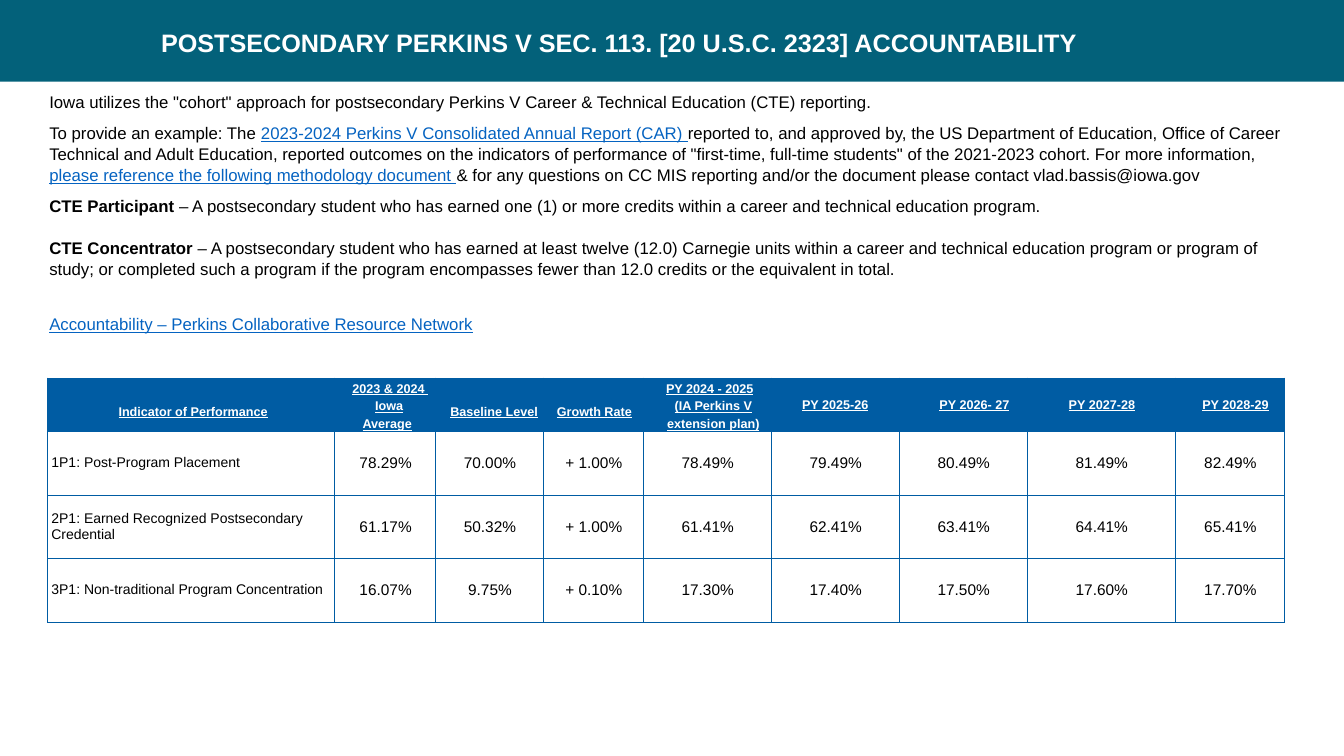
from lxml import etree
from pptx import Presentation
from pptx.dml.color import RGBColor
from pptx.enum.shapes import MSO_SHAPE
from pptx.enum.text import MSO_ANCHOR, PP_ALIGN
from pptx.oxml.ns import qn
from pptx.util import Inches, Pt

RECTANGLE = MSO_SHAPE.RECTANGLE
MIDDLE = MSO_ANCHOR.MIDDLE
LEFT, CENTER = PP_ALIGN.LEFT, PP_ALIGN.CENTER
TEAL = RGBColor(0x03, 0x61, 0x7A)
BLUE = RGBColor(0x00, 0x5C, 0xA3)
LINK_BLUE = RGBColor(0x05, 0x63, 0xC1)
BLACK = RGBColor(0x00, 0x00, 0x00)
WHITE = RGBColor(0xFF, 0xFF, 0xFF)
FONT = "Arial"
PLAIN, BOLD, LINK = "plain", "bold", "link"


def style_font(font, size, color, bold=False, underline=False):
    font.name = FONT
    font.size = Pt(size)
    font.color.rgb = color
    font.bold = bold
    font.underline = underline


def fill_cell(cell, lines, size, color, align, header=False):
    """Write (text, left indent) lines into a cell and draw its borders."""
    cell.margin_left = cell.margin_right = cell.margin_top = cell.margin_bottom = 0
    cell.vertical_anchor = MIDDLE
    frame = cell.text_frame
    frame.text = "\n".join(text for text, _ in lines)
    for paragraph, (_, indent) in zip(frame.paragraphs, lines):
        paragraph.alignment = align
        paragraph._p.get_or_add_pPr().set("marL", str(Inches(indent)))
        if len(lines) > 1:
            paragraph.line_spacing = Pt(12.6)
        style_font(paragraph.runs[0].font, size, color, header, header)
    properties = cell._tc.get_or_add_tcPr()
    for side in ("lnL", "lnR", "lnT", "lnB"):
        border = etree.SubElement(properties, qn(f"a:{side}"), w=str(Pt(0.5)))
        solid = etree.SubElement(border, qn("a:solidFill"))
        etree.SubElement(solid, qn("a:srgbClr"), val=str(BLUE))
    if header:
        cell.fill.solid()
        cell.fill.fore_color.rgb = BLUE
    else:
        cell.fill.background()


prs = Presentation()
prs.slide_width, prs.slide_height = Inches(13.33), Inches(7.5)
slide = prs.slides.add_slide(prs.slide_layouts[5])

# Title on its band
band = slide.shapes.add_shape(RECTANGLE, 0, 0, prs.slide_width, Inches(0.81))
band.shadow.inherit = False
band.fill.solid()
band.fill.fore_color.rgb = TEAL
band.line.fill.background()

title = slide.shapes.title
title._element.addprevious(band._element)
title.left, title.top = Inches(0.39), Inches(0.12)
title.width, title.height = Inches(11.5), Inches(0.63)
title.text_frame.text = "POSTSECONDARY PERKINS V SEC. 113. [20 U.S.C. 2323] ACCOUNTABILITY"
title.text_frame.vertical_anchor = MIDDLE
heading = title.text_frame.paragraphs[0]
heading.alignment = CENTER
heading.line_spacing = 0.9
style_font(heading.runs[0].font, 18, WHITE, bold=True)

# Explanation: space before, line spacing, pieces of text
explanation = [
    (0, 1.06, [
        ('Iowa utilizes the "cohort" approach for postsecondary Perkins V Career & '
         "Technical Education (CTE) reporting.", PLAIN)]),
    (6.6, 1.06, [
        ("To provide an example: The ", PLAIN),
        ("2023-2024 Perkins V Consolidated Annual Report (CAR) ", LINK),
        ("reported to, and approved by, the US Department of Education, Office of Career "
         "Technical and Adult Education, reported outcomes on the indicators of performance "
         'of "first-time, full-time students" of the 2021-2023 cohort. '
         "For more information, ", PLAIN),
        ("please reference the following methodology document ", LINK),
        ("& for any questions on CC MIS reporting and/or the document please contact "
         "vlad.bassis@iowa.gov", PLAIN)]),
    (6.6, 1.06, [
        ("CTE Participant ", BOLD),
        ("– A postsecondary student who has earned one (1) or more credits within a career "
         "and technical education program.", PLAIN)]),
    (14.6, 1.06, [
        ("CTE Concentrator ", BOLD),
        ("– A postsecondary student who has earned at least twelve (12.0) Carnegie units "
         "within a career and technical education program or program of study; or completed "
         "such a program if the program encompasses fewer than 12.0 credits or the "
         "equivalent in total.", PLAIN)]),
    (7.5, 2.2, [("Accountability – Perkins Collaborative Resource Network", LINK)]),
]
body = slide.shapes.add_textbox(Inches(0.39), Inches(0.85), Inches(12.48), Inches(2.9)).text_frame
body.word_wrap = True
for number, (space, spacing, pieces) in enumerate(explanation):
    paragraph = body.add_paragraph() if number else body.paragraphs[0]
    paragraph.space_before = Pt(space)
    paragraph.line_spacing = spacing
    for text, look in pieces:
        run = paragraph.add_run()
        run.text = text
        style_font(run.font, 12, LINK_BLUE if look == LINK else BLACK,
                   look == BOLD, look == LINK)

# Targets table
column_widths = [2.85, 1, 1.07, 0.99, 1.27, 1.27, 1.27, 1.47, 1.08]
row_heights = [0.53, 0.63, 0.63, 0.63]
headers = [
    [("Indicator of Performance", 0.04)],
    [("2023 & 2024 ", 0.1), ("Iowa", 0.08), ("Average", 0.04)],
    [("Baseline Level", 0.09)],
    [("Growth Rate", 0.02)],
    [("PY 2024 - 2025", 0.05), ("(IA Perkins V extension plan)", 0.12)],
    [("PY 2025-26", 0)],
    [("PY 2026- 27", 0.22)],
    [("PY 2027-28", 0.01)],
    [("PY 2028-29", 0.11)],
]
LOWERED_HEADERS = (0, 2, 3)
indicators = [
    ["1P1: Post-Program Placement", "78.29%", "70.00%", "+ 1.00%",
     "78.49%", "79.49%", "80.49%", "81.49%", "82.49%"],
    ["2P1: Earned Recognized Postsecondary Credential", "61.17%", "50.32%", "+ 1.00%",
     "61.41%", "62.41%", "63.41%", "64.41%", "65.41%"],
    ["3P1: Non-traditional Program Concentration", "16.07%", "9.75%", "+ 0.10%",
     "17.30%", "17.40%", "17.50%", "17.60%", "17.70%"],
]
targets = slide.shapes.add_table(
    len(row_heights), len(column_widths), Inches(0.47), Inches(3.75),
    Inches(sum(column_widths)), Inches(sum(row_heights))).table
targets.first_row = targets.horz_banding = False
for column, width in zip(targets.columns, column_widths):
    column.width = Inches(width)
for row, height in zip(targets.rows, row_heights):
    row.height = Inches(height)

for col, lines in enumerate(headers):
    fill_cell(targets.cell(0, col), lines, 9, WHITE, CENTER, header=True)
for col in LOWERED_HEADERS:
    targets.cell(0, col).margin_top = Inches(0.14)
for row, (indicator, *levels) in enumerate(indicators, start=1):
    fill_cell(targets.cell(row, 0), [(indicator, 0.04)], 10, BLACK, LEFT)
    for col, level in enumerate(levels, start=1):
        fill_cell(targets.cell(row, col), [(level, 0.01)], 11, BLACK, CENTER)

prs.save("out.pptx")
